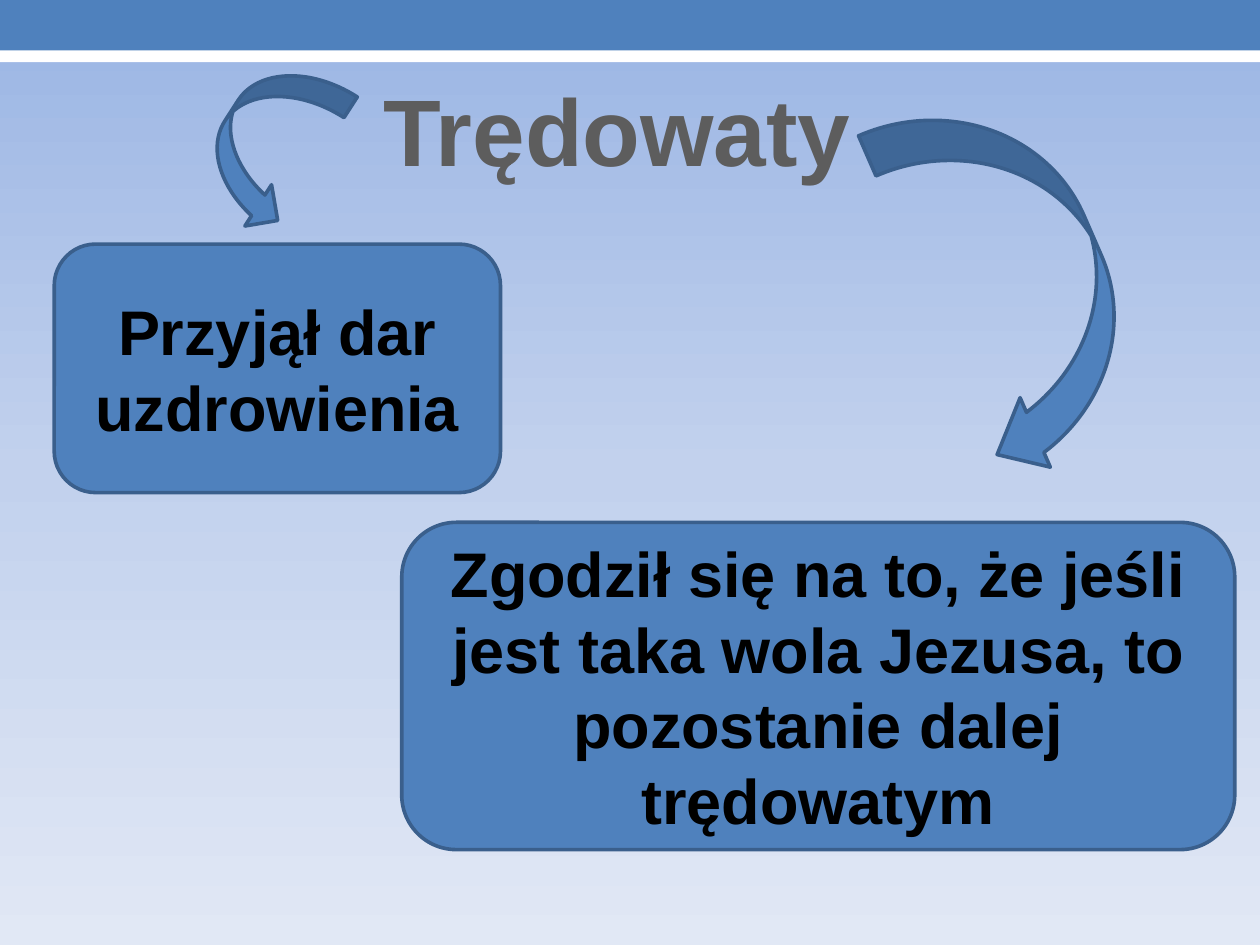
from copy import deepcopy

from pptx import Presentation
from pptx import util as u
from pptx.dml.color import RGBColor
from pptx.enum import shapes, text

BLUE, EDGE = "4F81BD", "3A5F8C"
SHAPE = shapes.MSO_SHAPE


def rgb(value):
    return RGBColor.from_string(value)


def write(sp, words, size, color, wrap=True, anchor=text.MSO_ANCHOR.MIDDLE):
    tf = sp.text_frame
    tf.word_wrap = wrap
    tf.vertical_anchor = anchor
    p = tf.paragraphs[0]
    p.alignment = text.PP_ALIGN.CENTER
    r = p.add_run()
    r.text = words
    r.font.name = "Arial"
    r.font.size = u.Pt(size)
    r.font.bold = True
    r.font.color.rgb = rgb(color)


prs = Presentation()
prs.slide_width, prs.slide_height = u.Pt(720), u.Pt(540)
s = prs.slides.add_slide(prs.slide_layouts[6])

# Background: three-stop gradient, darkest at the top
fill = s.background.fill
fill.gradient()
fill.gradient_angle = 270
first = fill.gradient_stops[0]._gs
first.addnext(deepcopy(first))
stops = [(0, "9AB5E4"), (0.5, "C2D1ED"), (1, "E1E8F5")]
for stop, (position, color) in zip(fill.gradient_stops, stops):
    stop.position = position
    stop.color.rgb = rgb(color)

# Top bands
for top, height, color in [(17.5, 18, "FFFFFF"), (0, 28.8, BLUE)]:
    sp = s.shapes.add_shape(SHAPE.RECTANGLE, 0, u.Pt(top), prs.slide_width, u.Pt(height))
    sp.shadow.inherit = False
    sp.fill.solid()
    sp.fill.fore_color.rgb = rgb(color)
    sp.line.fill.background()

# Title
sp = s.shapes.add_textbox(u.Pt(210.3), u.Pt(37.4), u.Pt(299.5), u.Pt(72.7))
write(sp, "Trędowaty ", 54, "5D5D5D", wrap=False, anchor=text.MSO_ANCHOR.TOP)

# Answer boxes and the curved arrows leading to them:
# kind, box, rotation, adjustments, words
parts = [
    (SHAPE.ROUNDED_RECTANGLE, (31, 139.5, 255, 142), 0, [],
     "Przyjął dar uzdrowienia"),
    (SHAPE.ROUNDED_RECTANGLE, (229.6, 298.5, 476, 187), 0, [],
     "Zgodził się na to, że jeśli jest taka wola Jezusa, to pozostanie dalej trędowatym"),
    (SHAPE.CURVED_DOWN_ARROW, (470.2, 108.7, 220.3, 100), 66.5, [0.25, 0.433, 0.25], ""),
    (SHAPE.CURVED_UP_ARROW, (105, 53.3, 98, 56.2), 122.8, [], ""),
]
for kind, box, rotation, adjustments, words in parts:
    sp = s.shapes.add_shape(kind, *map(u.Pt, box))
    sp.shadow.inherit = False
    sp.rotation = rotation
    for i, value in enumerate(adjustments):
        sp.adjustments[i] = value
    sp.fill.solid()
    sp.fill.fore_color.rgb = rgb(BLUE)
    sp.line.color.rgb = rgb(EDGE)
    sp.line.width = u.Pt(2.08)
    if words:
        write(sp, words, 36, "000000")

prs.save("out.pptx")
